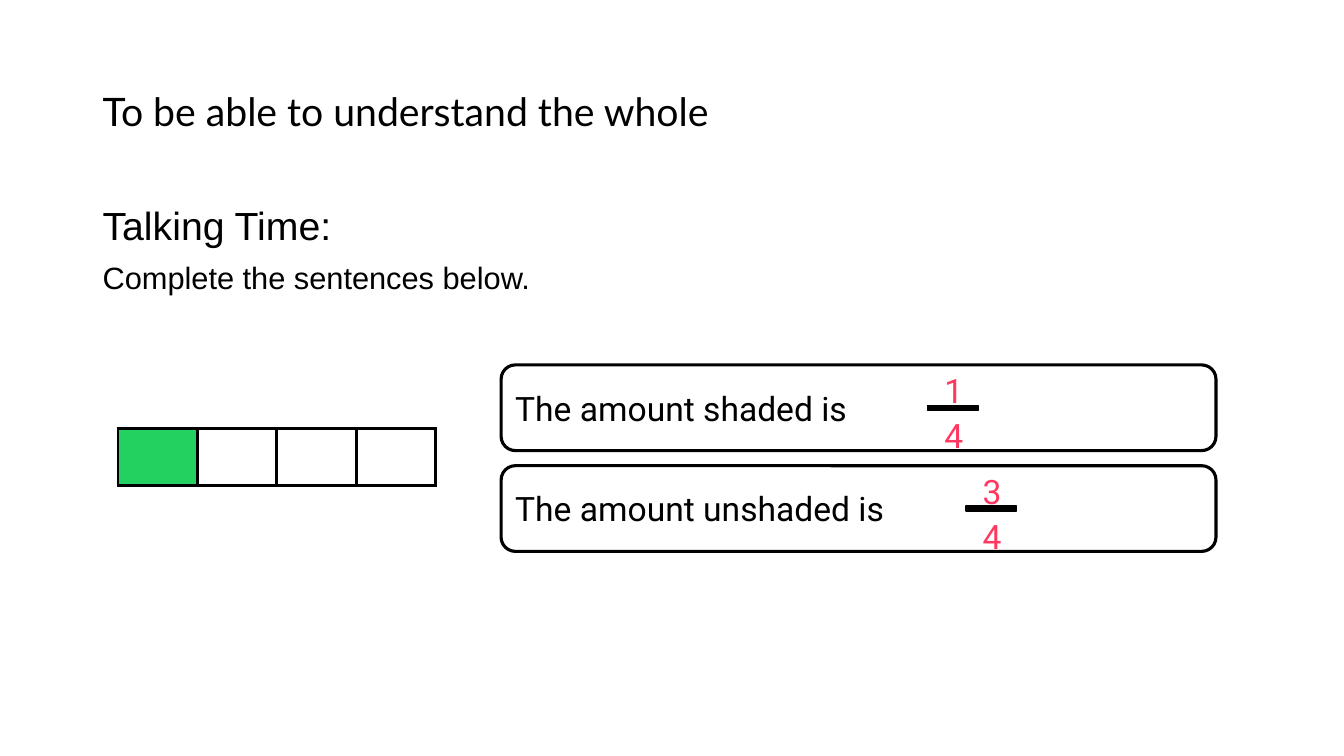
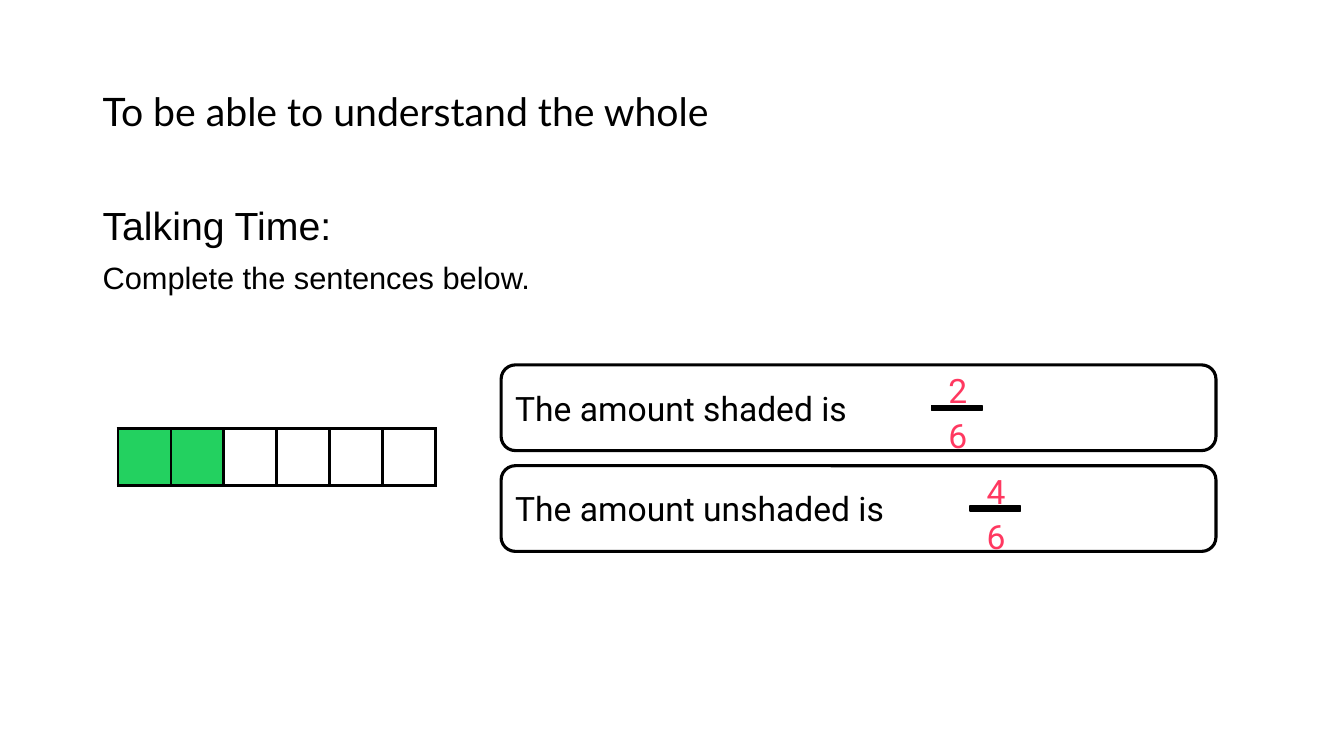
import lxml.etree
import pptx
import pptx.dml.color
import pptx.enum.shapes
import pptx.enum.text
import pptx.oxml.ns
import pptx.util
from dataclasses import dataclass

TITLE = "To be able to understand the whole"
PROMPT = [("Talking Time:", "large"), ("Complete the sentences below.", "medium")]
SENTENCES = [("The amount shaded is", 9.45), ("The amount unshaded is", 9.83)]
QUESTIONS = [
    {"shaded": 1, "parts": 4, "shift": 0},
    {"shaded": 2, "parts": 6, "shift": 0.04},
]

WIDTH, HEIGHT = 13.33, 7.5
MARGIN = 0.92
BAR_MODEL = (1.17, 4.25, 3.15, 0.57)
CARD_LEFT, CARD_TOP, CARD_WIDTH, CARD_HEIGHT, CARD_PITCH = 4.97, 3.62, 7.09, 0.85, 1
RULE_WIDTH, RULE_HEIGHT, RULE_DROP = 0.5, 0.05, 0.4
DIGIT_WIDTH, DIGIT_HEIGHT, DIGIT_PITCH = 0.43, 0.5, 0.45


@dataclass(frozen=True)
class Theme:
    ink: str = "000000"
    paper: str = "FFFFFF"
    shaded: str = "23D160"
    answer: str = "FF3860"
    title_font: str = "Lato"
    body_font: str = "Arial"
    sentence_font: str = "Roboto"
    large: int = 28
    sentence: int = 24
    medium: int = 22
    outline: float = 2.25
    hairline: float = 1


THEME = Theme()
ANCHOR = pptx.enum.text.MSO_ANCHOR
ALIGN = pptx.enum.text.PP_ALIGN
SHAPE = pptx.enum.shapes.MSO_SHAPE


def rgb(colour):
    return pptx.dml.color.RGBColor.from_string(colour)


def inches(*lengths):
    return [pptx.util.Inches(length) for length in lengths]


def apply(target, **values):
    for name, value in values.items():
        setattr(target, name, value)


def write(paragraph, words, font, size, colour=THEME.ink, **layout):
    apply(paragraph, **layout)
    run = paragraph.add_run()
    apply(run, text=words)
    apply(run.font, name=font, size=pptx.util.Pt(size))
    run.font.color.rgb = rgb(colour)


def text_frame(slide, box, **layout):
    frame = slide.shapes.add_textbox(*inches(*box)).text_frame
    apply(frame, **layout)
    return frame


def outlined(slide, kind, box, fill, weight):
    shape = slide.shapes.add_shape(kind, *inches(*box))
    shape.shadow.inherit = False
    shape.fill.solid()
    shape.fill.fore_color.rgb = rgb(fill)
    shape.line.color.rgb = rgb(THEME.ink)
    shape.line.width = pptx.util.Pt(weight)
    return shape


def border(cell):
    properties = cell._tc.get_or_add_tcPr()
    tag = pptx.oxml.ns.qn
    for side in ("lnL", "lnR", "lnT", "lnB"):
        edge = lxml.etree.SubElement(
            properties, tag(f"a:{side}"), w=str(pptx.util.Pt(THEME.outline)))
        paint = lxml.etree.SubElement(edge, tag("a:solidFill"))
        lxml.etree.SubElement(paint, tag("a:srgbClr"), val=THEME.ink)


def add_heading(slide):
    title = text_frame(slide, (MARGIN, 0.4, 9.6, 1.45),
                       word_wrap=True, vertical_anchor=ANCHOR.MIDDLE)
    write(title.paragraphs[0], TITLE, THEME.title_font, THEME.large, line_spacing=0.9)
    prompt = text_frame(slide, (MARGIN, 2, 11.5, 1.2), word_wrap=True)
    for index, (words, size) in enumerate(PROMPT):
        paragraph = prompt.add_paragraph() if index else prompt.paragraphs[0]
        if index:
            paragraph.space_before = pptx.util.Pt(10)
        write(paragraph, words, THEME.body_font, getattr(THEME, size), line_spacing=0.9)


def add_bar_model(slide, shaded, parts):
    table = slide.shapes.add_table(1, parts, *inches(*BAR_MODEL)).table
    apply(table, first_row=False, horz_banding=False)
    for index, column in enumerate(table.columns):
        column.width = pptx.util.Inches(BAR_MODEL[2] / parts)
        cell = table.cell(0, index)
        border(cell)
        cell.fill.solid()
        cell.fill.fore_color.rgb = rgb(THEME.shaded if index < shaded else THEME.paper)


def add_fraction(slide, centre, top, digits):
    rule = (centre - RULE_WIDTH / 2, top + RULE_DROP, RULE_WIDTH, RULE_HEIGHT)
    outlined(slide, SHAPE.RECTANGLE, rule, THEME.ink, THEME.hairline)
    for row, digit in enumerate(digits):
        box = (centre + 0.01 - DIGIT_WIDTH / 2, top + row * DIGIT_PITCH,
               DIGIT_WIDTH, DIGIT_HEIGHT)
        frame = text_frame(slide, box, word_wrap=False)
        write(frame.paragraphs[0], str(digit), THEME.sentence_font, THEME.sentence,
              THEME.answer, alignment=ALIGN.CENTER)


def add_sentences(slide, shaded, parts, shift):
    for row, (words, centre) in enumerate(SENTENCES):
        top = CARD_TOP + row * CARD_PITCH
        card = outlined(slide, SHAPE.ROUNDED_RECTANGLE,
                        (CARD_LEFT, top, CARD_WIDTH, CARD_HEIGHT),
                        THEME.paper, THEME.outline)
        apply(card.text_frame, word_wrap=True, vertical_anchor=ANCHOR.MIDDLE)
        write(card.text_frame.paragraphs[0], words, THEME.sentence_font,
              THEME.sentence, alignment=ALIGN.LEFT)
        amount = (shaded, parts - shaded)[row]
        add_fraction(slide, centre + shift, top, (amount, parts))


def main():
    """Build one fraction slide for each question and save the deck."""
    deck = pptx.Presentation()
    deck.slide_width, deck.slide_height = inches(WIDTH, HEIGHT)
    for question in QUESTIONS:
        slide = deck.slides.add_slide(deck.slide_layouts[6])
        add_heading(slide)
        add_bar_model(slide, question["shaded"], question["parts"])
        add_sentences(slide, **question)
    deck.save("out.pptx")


if __name__ == "__main__":
    main()
